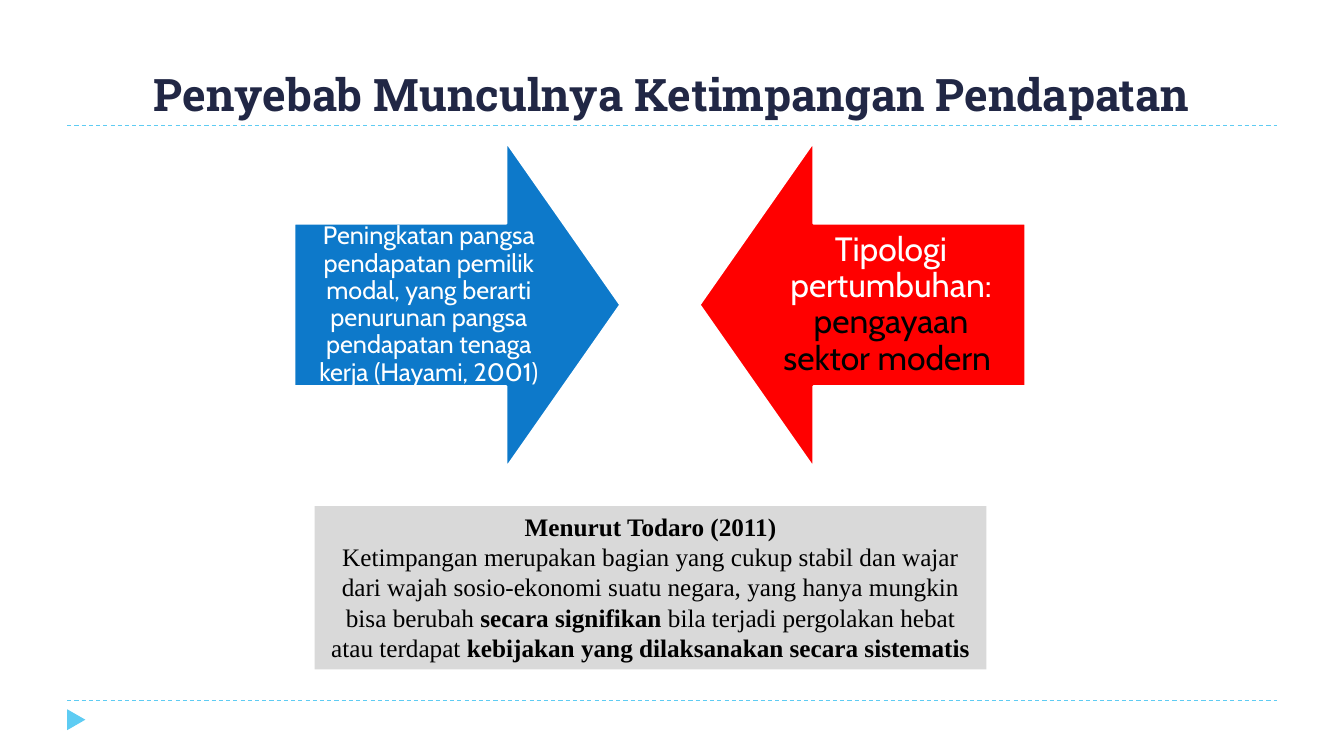
"""Build the slide on the causes of income inequality."""
from dataclasses import dataclass

import pptx
import pptx.dml.color
import pptx.enum.dml
import pptx.enum.shapes
import pptx.enum.text
import pptx.oxml.ns
import pptx.util
from lxml import etree

RGBColor = pptx.dml.color.RGBColor
Preset = pptx.enum.shapes.MSO_SHAPE
Anchor = pptx.enum.text.MSO_ANCHOR

NAVY = RGBColor(0x21, 0x27, 0x45)
SKY = RGBColor(0x5E, 0xCC, 0xF3)
BLUE = RGBColor(0x0D, 0x79, 0xCA)
RED = RGBColor(0xFF, 0x00, 0x00)
GREY = RGBColor(0xD9, 0xD9, 0xD9)
WHITE = RGBColor(0xFF, 0xFF, 0xFF)
BLACK = RGBColor(0x00, 0x00, 0x00)

WIDTH = pptx.util.Inches(13.33)
HEIGHT = pptx.util.Inches(7.5)
GRID = 20
RULE_ROWS = (3.33, 18.53)


@dataclass(frozen=True)
class Area:
    """A rectangle in grid columns and rows."""
    column: float
    row: float
    columns: float
    rows: float

    def lengths(self) -> tuple[int, int, int, int]:
        """Return left, top, width and height as slide lengths."""
        return (across(self.column), down(self.row),
                across(self.columns), down(self.rows))


@dataclass(frozen=True)
class Words:
    """A run of text with its look."""
    text: str
    size: float
    font: str
    color: RGBColor
    bold: bool = False


@dataclass(frozen=True)
class Cause:
    """An arrow that names one cause of inequality."""
    preset: int
    column: float
    fill: RGBColor
    inset: float
    runs: tuple[Words, ...]


CAUSES = (
    Cause(Preset.RIGHT_ARROW, 4.38, BLUE, 0.14, (
        Words("Peningkatan pangsa pendapatan pemilik modal, yang berarti "
              "penurunan pangsa pendapatan tenaga kerja (Hayami, 2001)",
              18, "Cabin", WHITE),)),
    Cause(Preset.LEFT_ARROW, 10.41, RED, 0.19, (
        Words("Tipologi pertumbuhan: ", 24, "Cabin", WHITE),
        Words("pengayaan sektor modern ", 24, "Cabin", BLACK))),
)


def across(columns: float) -> int:
    """Convert grid columns to a length."""
    return round(WIDTH * columns / GRID)


def down(rows: float) -> int:
    """Convert grid rows to a length."""
    return round(HEIGHT * rows / GRID)


def write(frame, paragraphs, anchor, spacing: float = 1.0) -> None:
    """Fill a text frame with centred paragraphs, run by run."""
    frame.word_wrap = True
    frame.vertical_anchor = anchor
    for index, runs in enumerate(paragraphs):
        paragraph = frame.add_paragraph() if index else frame.paragraphs[0]
        paragraph.alignment = pptx.enum.text.PP_ALIGN.CENTER
        paragraph.line_spacing = spacing
        for words in runs:
            run = paragraph.add_run()
            run.text = words.text
            run.font.size = pptx.util.Pt(words.size)
            run.font.name = words.font
            run.font.bold = words.bold
            run.font.color.rgb = words.color


def add_block(slide, preset, area: Area, fill: RGBColor):
    """Add a flat filled shape without an outline."""
    block = slide.shapes.add_shape(preset, *area.lengths())
    block.shadow.inherit = False
    block.fill.solid()
    block.fill.fore_color.rgb = fill
    block.line.fill.background()
    return block


def add_rule(slide, row: float) -> None:
    """Add a dashed rule between the side margins."""
    rule = slide.shapes.add_connector(
        pptx.enum.shapes.MSO_CONNECTOR.STRAIGHT,
        across(1), down(row), across(GRID - 1), down(row))
    rule.line.color.rgb = SKY
    rule.line.width = pptx.util.Pt(0.75)
    rule.line.dash_style = pptx.enum.dml.MSO_LINE.DASH
    etree.SubElement(rule._element.spPr, pptx.oxml.ns.qn("a:effectLst"))


def add_cause(slide, cause: Cause) -> None:
    """Add a cause arrow with its text."""
    arrow = add_block(slide, cause.preset, Area(cause.column, 3.76, 4.85, 8.61),
                      cause.fill)
    arrow.adjustments[0] = 0.5
    arrow.adjustments[1] = 0.35
    arrow.line.color.rgb = WHITE
    arrow.line.width = pptx.util.Pt(1.5)
    frame = arrow.text_frame
    inset = pptx.util.Inches(cause.inset)
    frame.margin_left = frame.margin_right = inset
    frame.margin_top = frame.margin_bottom = inset
    write(frame, [cause.runs], Anchor.MIDDLE, 0.9)


def add_note(slide) -> None:
    """Add the grey box with the view of Todaro."""
    def serif(text: str, bold: bool = False) -> Words:
        return Words(text, 18, "Times New Roman", BLACK, bold)

    note = add_block(slide, Preset.RECTANGLE, Area(4.68, 13.39, 10, 4.32), GREY)
    write(note.text_frame, [
        [serif("Menurut Todaro (2011)", True)],
        [serif("Ketimpangan merupakan bagian yang cukup stabil dan wajar dari "
               "wajah sosio-ekonomi suatu negara, yang hanya mungkin bisa "
               "berubah "),
         serif("secara signifikan ", True),
         serif("bila terjadi pergolakan hebat atau terdapat "),
         serif("kebijakan yang dilaksanakan secara sistematis", True)],
    ], Anchor.TOP)
    note.text_frame.auto_size = pptx.enum.text.MSO_AUTO_SIZE.SHAPE_TO_FIT_TEXT


def main() -> None:
    """Build and save the slide."""
    deck = pptx.Presentation()
    deck.slide_width, deck.slide_height = WIDTH, HEIGHT
    slide = deck.slides.add_slide(deck.slide_layouts[6])
    for row in RULE_ROWS:
        add_rule(slide, row)
    marker = add_block(slide, Preset.ISOSCELES_TRIANGLE,
                       Area(0.98, 18.8, 0.31, 0.48), SKY)
    marker.rotation = 90
    title = slide.shapes.add_textbox(*Area(1, 0.45, 18, 2.88).lengths())
    write(title.text_frame, [[Words("Penyebab Munculnya Ketimpangan Pendapatan",
                                    32, "Roboto Slab", NAVY, True)]],
          Anchor.BOTTOM)
    for cause in CAUSES:
        add_cause(slide, cause)
    add_note(slide)
    deck.save("out.pptx")


if __name__ == "__main__":
    main()
